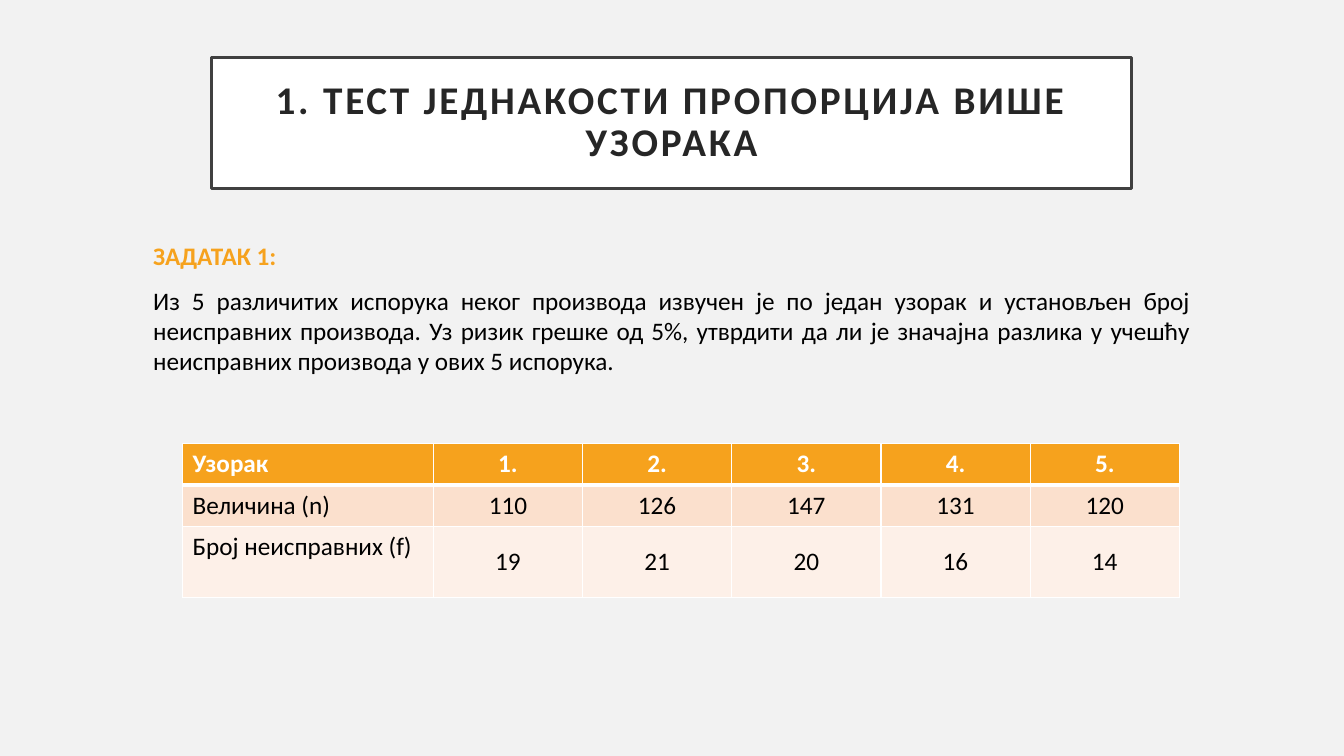
from pptx import Presentation
from pptx.dml.color import RGBColor
from pptx.enum.text import MSO_ANCHOR, MSO_AUTO_SIZE, PP_ALIGN
from pptx.oxml.ns import qn
from pptx.util import Cm, Pt
from lxml.etree import SubElement


def color(value):
    return RGBColor.from_string(value)


def add_text(para, text, size, ink, bold):
    span = para.add_run()
    span.text = text
    span.font.name = "Calibri"
    span.font.size = Pt(size)
    span.font.bold = bold
    span.font.color.rgb = color(ink)
    return span


deck = Presentation()
deck.slide_width, deck.slide_height = Cm(33.87), Cm(19.05)
page = deck.slides.add_slide(deck.slide_layouts[5])
page.background.fill.solid()
page.background.fill.fore_color.rgb = color("F2F2F2")

# Framed title
title = page.shapes.title
title.left, title.top, title.width, title.height = Cm(5.33), Cm(1.45), Cm(23.19), Cm(3.3)
title.fill.solid()
title.fill.fore_color.rgb = color("FFFFFF")
title.line.color.rgb = color("404040")
title.line.width = Pt(2.5)
frame = title.text_frame
frame.word_wrap = True
frame.auto_size = MSO_AUTO_SIZE.NONE
frame.vertical_anchor = MSO_ANCHOR.MIDDLE
frame.margin_left = frame.margin_right = frame.margin_top = frame.margin_bottom = Cm(0.51)
para = frame.paragraphs[0]
para.alignment = PP_ALIGN.CENTER
para.line_spacing = 0.9
span = add_text(para, "1. ТЕСТ ЈЕДНАКОСТИ ПРОПОРЦИЈА ВИШЕ УЗОРАКА", 28, "262626", True)
span.font._element.set("spc", "200")

# Task text
box = page.shapes.add_textbox(Cm(3.61), Cm(5.94), Cm(26.64), Cm(11.66))
frame = box.text_frame
frame.word_wrap = True
add_text(frame.paragraphs[0], "ЗАДАТАК 1:", 18, "F6A21D", True)
para = frame.add_paragraph()
para.alignment = PP_ALIGN.JUSTIFY
para.space_before = Pt(10)
add_text(para, "Из 5 различитих испорука неког производа извучен је по један узорак и "
         "установљен број неисправних производа. Уз ризик грешке од 5%, утврдити да ли је "
         "значајна разлика у учешћу неисправних производа у ових 5 испорука.",
         18, "000000", False)

# Table of samples: values, row height, fill
samples = [
    (["Узорак", "1.", "2.", "3.", "4.", "5."], 1.04, "F6A21D"),
    (["Величина (n)", "110", "126", "147", "131", "120"], 1.04, "FBE0CD"),
    (["Број неисправних (f)", "19", "21", "20", "16", "14"], 1.8, "FDF0E8"),
]
label_width, value_width = 6.32, 3.76
table = page.shapes.add_table(3, 6, Cm(4.6), Cm(11.18),
                              Cm(label_width + 5 * value_width), Cm(3.88)).table
for index, column in enumerate(table.columns):
    column.width = Cm(value_width if index else label_width)

for row, (values, height, fill) in enumerate(samples):
    table.rows[row].height = Cm(height)
    header = row == 0
    for index, value in enumerate(values):
        cell = table.cell(row, index)
        para = cell.text_frame.paragraphs[0]
        if index:
            cell.vertical_anchor = MSO_ANCHOR.MIDDLE
            para.alignment = PP_ALIGN.CENTER
        add_text(para, value, 18, "FFFFFF" if header else "000000", header)

        # White borders, thick between header and body
        thick_side = {0: "lnB", 1: "lnT"}.get(row)
        properties = cell._tc.get_or_add_tcPr()
        for side in ("lnL", "lnR", "lnT", "lnB"):
            width = Pt(3 if side == thick_side else 1)
            border = SubElement(properties, qn("a:" + side), w=str(width))
            paint = SubElement(border, qn("a:solidFill"))
            SubElement(paint, qn("a:srgbClr"), val="FFFFFF")
        cell.fill.solid()
        cell.fill.fore_color.rgb = color(fill)

deck.save("out.pptx")
